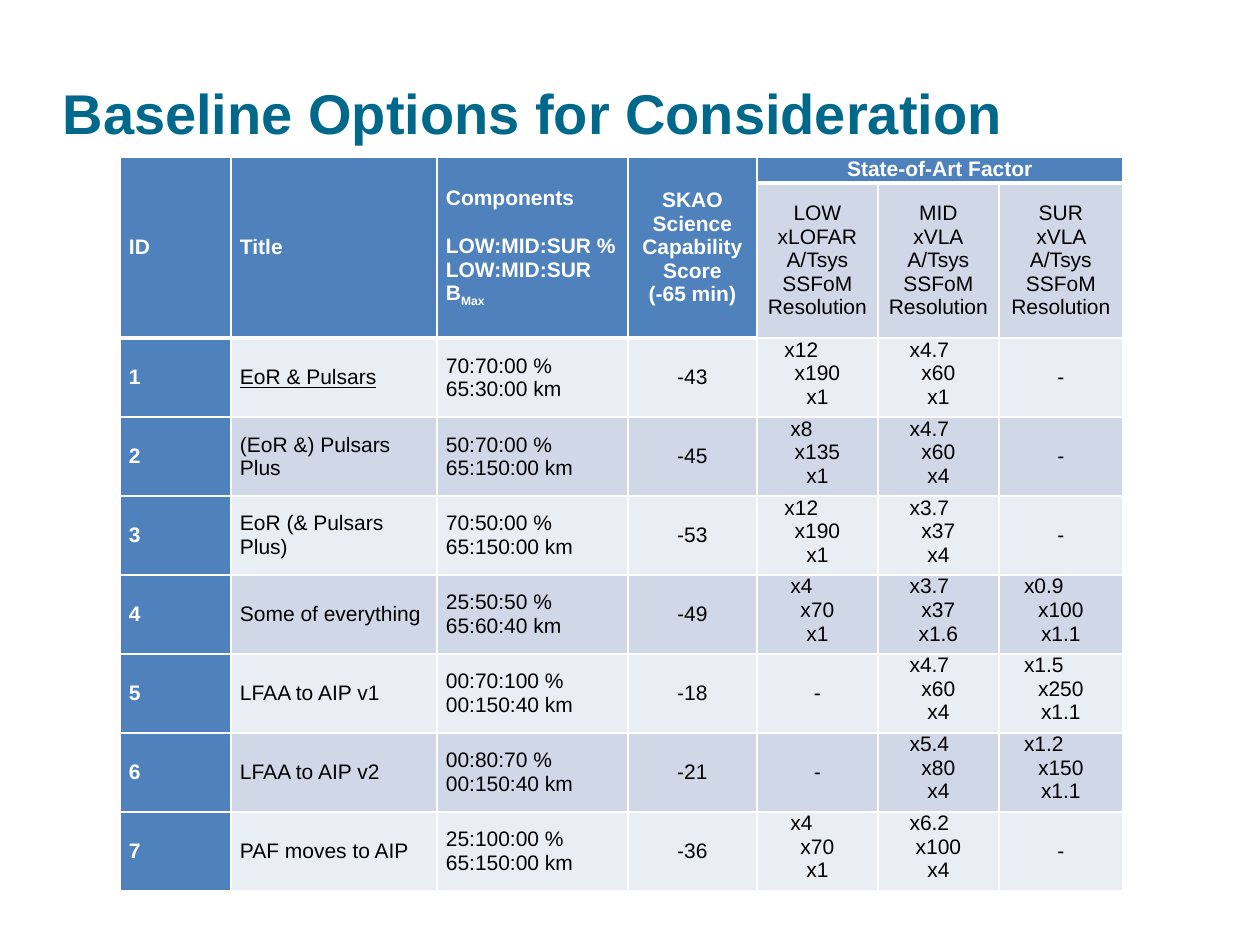
"""Build the slide comparing the baseline options in one table."""
from lxml.etree import SubElement
from pptx import Presentation
from pptx.dml.color import RGBColor
from pptx.enum.text import MSO_ANCHOR, PP_ALIGN
from pptx.oxml.ns import qn
from pptx.util import Emu, Pt

TEAL = RGBColor(0x00, 0x68, 0x8A)
BLUE = RGBColor(0x4F, 0x81, 0xBD)
PALE = RGBColor(0xE9, 0xED, 0xF4)
MIST = RGBColor(0xD0, 0xD8, 0xE8)
WHITE = RGBColor(0xFF, 0xFF, 0xFF)
BLACK = RGBColor(0x00, 0x00, 0x00)

COLS = [111, 206, 191, 129, 121, 121, 124]
ROWS = [26, 155] + [79] * 7
HEADS = [
    ["ID", "Title", "Components\nLOW:MID:SUR % LOW:MID:SUR B",
     "SKAO Science Capability Score\n(-65 min)", "State-of-Art Factor", "", ""],
    ["", "", "", "", "LOW xLOFAR\nA/Tsys SSFoM\nResolution",
     "MID\nxVLA\nA/Tsys SSFoM Resolution", "SUR\nxVLA A/Tsys SSFoM Resolution"],
]
OPTIONS = [
    ["1", "EoR & Pulsars", "70:70:00 %\n65:30:00 km", "-43",
     "x12\nx190\nx1", "x4.7\nx60\nx1", "-"],
    ["2", "(EoR &) Pulsars Plus", "50:70:00 %\n65:150:00 km", "-45",
     "x8\nx135\nx1", "x4.7\nx60\nx4", "-"],
    ["3", "EoR (& Pulsars Plus)", "70:50:00 %\n65:150:00 km", "-53",
     "x12\nx190\nx1", "x3.7\nx37\nx4", "-"],
    ["4", "Some of everything", "25:50:50 % 65:60:40 km", "-49",
     "x4\nx70\nx1", "x3.7\nx37\nx1.6", "x0.9\nx100\nx1.1"],
    ["5", "LFAA to AIP v1", "00:70:100 % 00:150:40 km", "-18",
     "-", "x4.7\nx60\nx4", "x1.5\nx250\nx1.1"],
    ["6", "LFAA to AIP v2", "00:80:70 % 00:150:40 km", "-21",
     "-", "x5.4\nx80\nx4", "x1.2\nx150\nx1.1"],
    ["7", "PAF moves to AIP", "25:100:00 % 65:150:00 km", "-36",
     "x4\nx70\nx1", "x6.2\nx100\nx4", "-"],
]
FIRST_LINE_SHIFT = {4: 32, 5: 18, 6: 34}


def px(n):
    return Emu(round(n * 914400 / 126))


def add_border(cell, side, width):
    ln = SubElement(cell._tc.get_or_add_tcPr(), qn(f"a:ln{side}"), w=str(Pt(width)))
    fill = SubElement(ln, qn("a:solidFill"))
    SubElement(fill, qn("a:srgbClr"), val=str(WHITE))


prs = Presentation()
prs.slide_width, prs.slide_height = px(1260), px(945)
s = prs.slides.add_slide(prs.slide_layouts[5])

table = s.shapes.add_table(len(ROWS), len(COLS), px(120), px(157),
                           px(sum(COLS)), px(sum(ROWS))).table
table.first_row = table.horz_banding = False
for column, width in zip(table.columns, COLS):
    column.width = px(width)
for row, height in zip(table.rows, ROWS):
    row.height = px(height)
for j in range(4):
    table.cell(0, j).merge(table.cell(1, j))
table.cell(0, 4).merge(table.cell(0, 6))

for i, texts in enumerate(HEADS + OPTIONS):
    for j, text in enumerate(texts):
        cell = table.cell(i, j)
        strong = i == 0 or j == 0 or (i == 1 and j < 4)
        stacked = i > 1 and j > 3 and "\n" in text
        shift = FIRST_LINE_SHIFT[j] if stacked else 0
        inset = 0 if stacked else 9
        head_end = 1 if j < 4 else 0
        for side in "LRTB":
            thick = (side == "B" and i <= head_end) or (side == "T" and i == head_end + 1)
            add_border(cell, side, 3 if thick else 1)
        cell.fill.solid()
        cell.fill.fore_color.rgb = BLUE if strong else PALE if i > 1 and i % 2 == 0 else MIST
        cell.margin_left, cell.margin_right = px(inset), px(inset + shift)
        cell.margin_top = cell.margin_bottom = 0
        top = stacked or (i == 0 and j == 4)
        cell.vertical_anchor = MSO_ANCHOR.TOP if top else MSO_ANCHOR.MIDDLE
        tf = cell.text_frame
        tf.text = text
        for n, p in enumerate(tf.paragraphs):
            p.alignment = PP_ALIGN.CENTER if j > 2 else PP_ALIGN.LEFT
            if n and shift:
                p._p.get_or_add_pPr().set("marL", str(px(shift)))
            p.font.name, p.font.size = "Arial", Pt(12)
            p.font.bold = strong
            p.font.color.rgb = WHITE if strong else BLACK

table.cell(2, 1).text_frame.paragraphs[0].font.underline = True
p = table.cell(0, 2).text_frame.paragraphs[1]
p.space_before = Pt(14)
r = p.add_run()
r.text = "Max"
r._r.get_or_add_rPr().set("baseline", "-25000")

title = s.shapes.title
title.left, title.top, title.width, title.height = px(50), px(69), px(970), px(86)
tf = title.text_frame
tf.text = "Baseline Options for Consideration"
tf.vertical_anchor = MSO_ANCHOR.MIDDLE
p = tf.paragraphs[0]
p.alignment = PP_ALIGN.LEFT
p.font.name, p.font.size, p.font.bold = "Arial", Pt(32), True
p.font.color.rgb = TEAL

prs.save("out.pptx")
